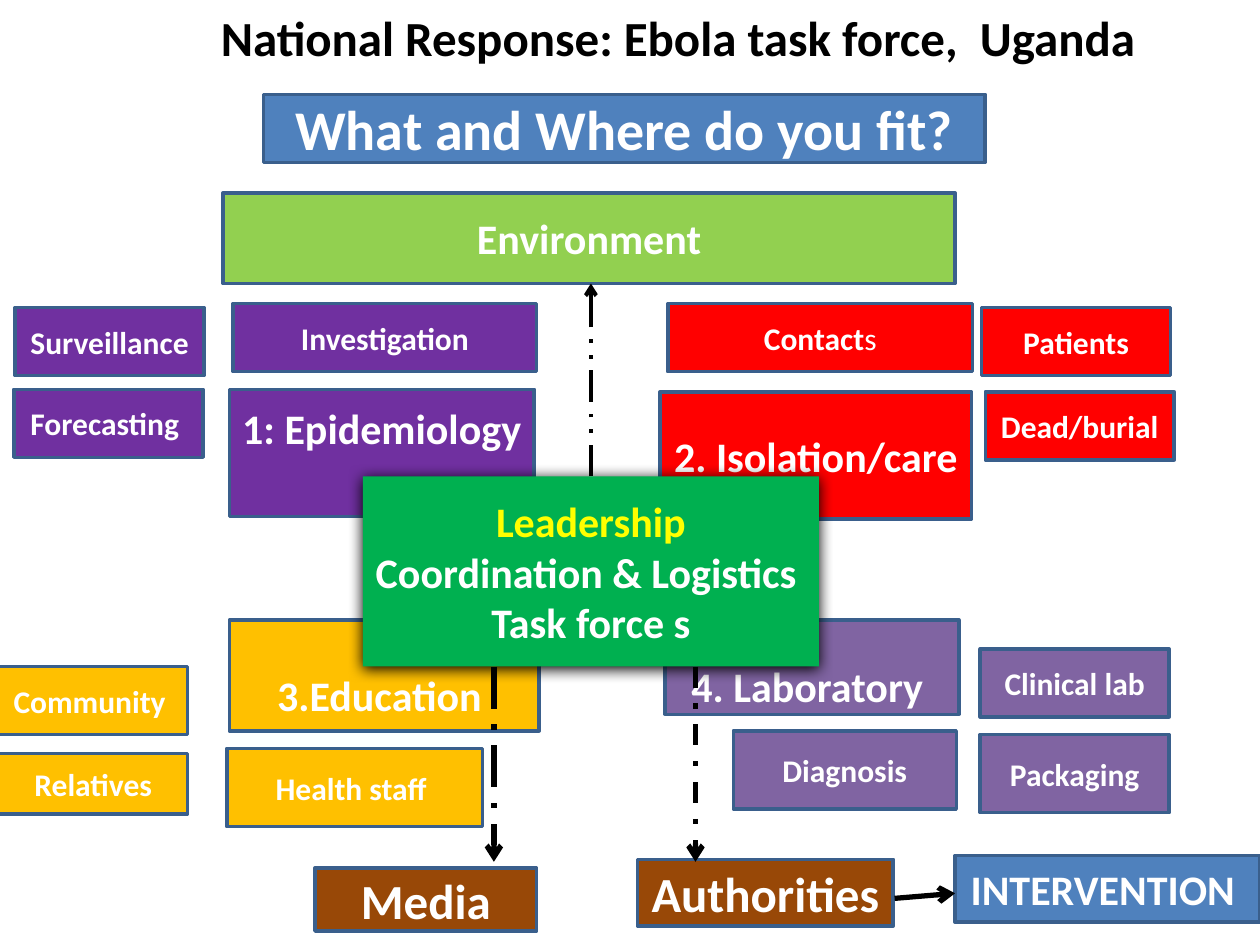
from pptx import Presentation
from pptx.dml.color import RGBColor
from pptx.enum.dml import MSO_LINE
from pptx.enum.shapes import MSO_CONNECTOR, MSO_SHAPE
from pptx.enum.text import MSO_ANCHOR, PP_ALIGN
from pptx.oxml import parse_xml
from pptx.oxml.ns import nsdecls
from pptx.util import Inches, Pt


def rgb(value):
    return RGBColor.from_string(value)


def add_box(x, y, w, h, fill, size, lines, top=0.05, bottom=0.05):
    sp = s.shapes.add_shape(MSO_SHAPE.RECTANGLE, Inches(x), Inches(y), Inches(w), Inches(h))
    sp.shadow.inherit = False
    sp.fill.solid()
    sp.fill.fore_color.rgb = rgb(fill)
    sp.line.color.rgb = rgb("3A5F8C")
    sp.line.width = Pt(2)
    tf = sp.text_frame
    tf.word_wrap = True
    tf.vertical_anchor = MSO_ANCHOR.MIDDLE
    tf.margin_top, tf.margin_bottom = Inches(top), Inches(bottom)
    for i, line in enumerate(lines):
        p = tf.add_paragraph() if i else tf.paragraphs[0]
        p.alignment = PP_ALIGN.CENTER
        p.font.name = "Calibri"
        p.font.size = Pt(size)
        p.font.bold = True
        p.font.color.rgb = rgb("FFFFFF")
        p.add_run().text = line
    return sp


prs = Presentation()
prs.slide_width, prs.slide_height = Inches(10), Inches(7.5)
s = prs.slides.add_slide(prs.slide_layouts[5])

title = s.shapes.title
title.left, title.top, title.width, title.height = Inches(1.13), Inches(0), Inches(8.5), Inches(0.58)
title.text_frame.text = "National Response: Ebola task force,  Uganda"
title.text_frame.vertical_anchor = MSO_ANCHOR.MIDDLE
p = title.text_frame.paragraphs[0]
p.alignment = PP_ALIGN.CENTER
p.font.name = "Calibri"
p.font.size = Pt(28)
p.font.bold = True
p.font.color.rgb = rgb("000000")

purple, red, amber, violet = "7030A0", "FF0000", "FFC000", "8064A2"
blue, brown = "4F81BD", "984807"

units = [
    (0.12, 2.44, 1.5, 0.54, purple, "Surveillance "),
    (0.11, 3.09, 1.5, 0.54, purple, "Forecasting "),
    (1.85, 2.41, 2.41, 0.54, purple, "Investigation"),
    (7.79, 2.44, 1.5, 0.54, red, "Patients"),
    (7.82, 3.11, 1.5, 0.54, red, "Dead/burial"),
    (-0.01, 5.29, 1.5, 0.54, amber, "Community "),
    (-0.01, 5.98, 1.5, 0.48, amber, "Relatives"),
    (1.8, 5.94, 2.03, 0.62, amber, "Health staff "),
    (7.78, 5.15, 1.5, 0.54, violet, "Clinical lab"),
    (7.78, 5.83, 1.5, 0.62, violet, "Packaging"),
    (5.82, 5.8, 1.77, 0.62, violet, "Diagnosis"),
]
for x, y, w, h, fill, text in units:
    add_box(x, y, w, h, fill, 18, [text])

contacts = add_box(5.3, 2.41, 2.42, 0.54, red, 18, ["Contact"])
r = contacts.text_frame.paragraphs[0].add_run()
r.text = "s"
r.font.bold = False

add_box(1.82, 3.09, 2.42, 1.01, purple, 24, ["1: Epidemiology"], bottom=0.45)
add_box(5.24, 3.11, 2.47, 1.01, red, 24, ["2. Isolation/care "])
add_box(1.82, 4.92, 2.46, 0.88, amber, 24, ["3.Education "], top=0.35)
add_box(5.28, 4.92, 2.33, 0.75, violet, 24, ["4. Laboratory "], top=0.35)

add_box(2.09, 0.75, 5.73, 0.54, blue, 32, ["What and Where do you fit?"])
add_box(1.77, 1.53, 5.81, 0.72, "92D050", 24, ["Environment"])
add_box(2.5, 6.89, 1.76, 0.5, brown, 28, ["Media"])
add_box(5.06, 6.82, 2.03, 0.53, brown, 28, ["Authorities"])
add_box(7.58, 6.79, 2.42, 0.53, blue, 24, ["INTERVENTION "])

hub = add_box(2.88, 3.78, 3.62, 1.51, "00B050", 24,
              ["Leadership", "Coordination & Logistics ", "Task force s"])
hub.line.fill.background()
hub.text_frame.paragraphs[0].font.color.rgb = rgb("FFFF00")
hub_effects = hub._element.spPr.find("{*}effectLst")
hub_effects.append(parse_xml(
    f'<a:outerShdw {nsdecls("a")} blurRad="{Pt(8.5)}" dist="{Pt(1)}" dir="5400000" rotWithShape="0">'
    '<a:srgbClr val="000000"/></a:outerShdw>'))

arrows = [
    (7.1, 7.13, 7.58, 7.09, 3, None),
    (4.69, 3.78, 4.69, 2.25, 2.25, MSO_LINE.DASH_DOT_DOT),
    (3.92, 5.29, 3.92, 6.84, 3, MSO_LINE.LONG_DASH_DOT),
    (5.52, 5.29, 5.52, 6.84, 3, MSO_LINE.DASH_DOT),
]
for x1, y1, x2, y2, width, dash in arrows:
    c = s.shapes.add_connector(MSO_CONNECTOR.STRAIGHT, Inches(x1), Inches(y1), Inches(x2), Inches(y2))
    c.line.color.rgb = rgb("000000")
    c.line.width = Pt(width)
    if dash:
        c.line.dash_style = dash
    c.line._get_or_add_ln().append(parse_xml(f'<a:tailEnd {nsdecls("a")} type="arrow"/>'))
    c._element.spPr.append(parse_xml(f'<a:effectLst {nsdecls("a")}/>'))

prs.save("out.pptx")
